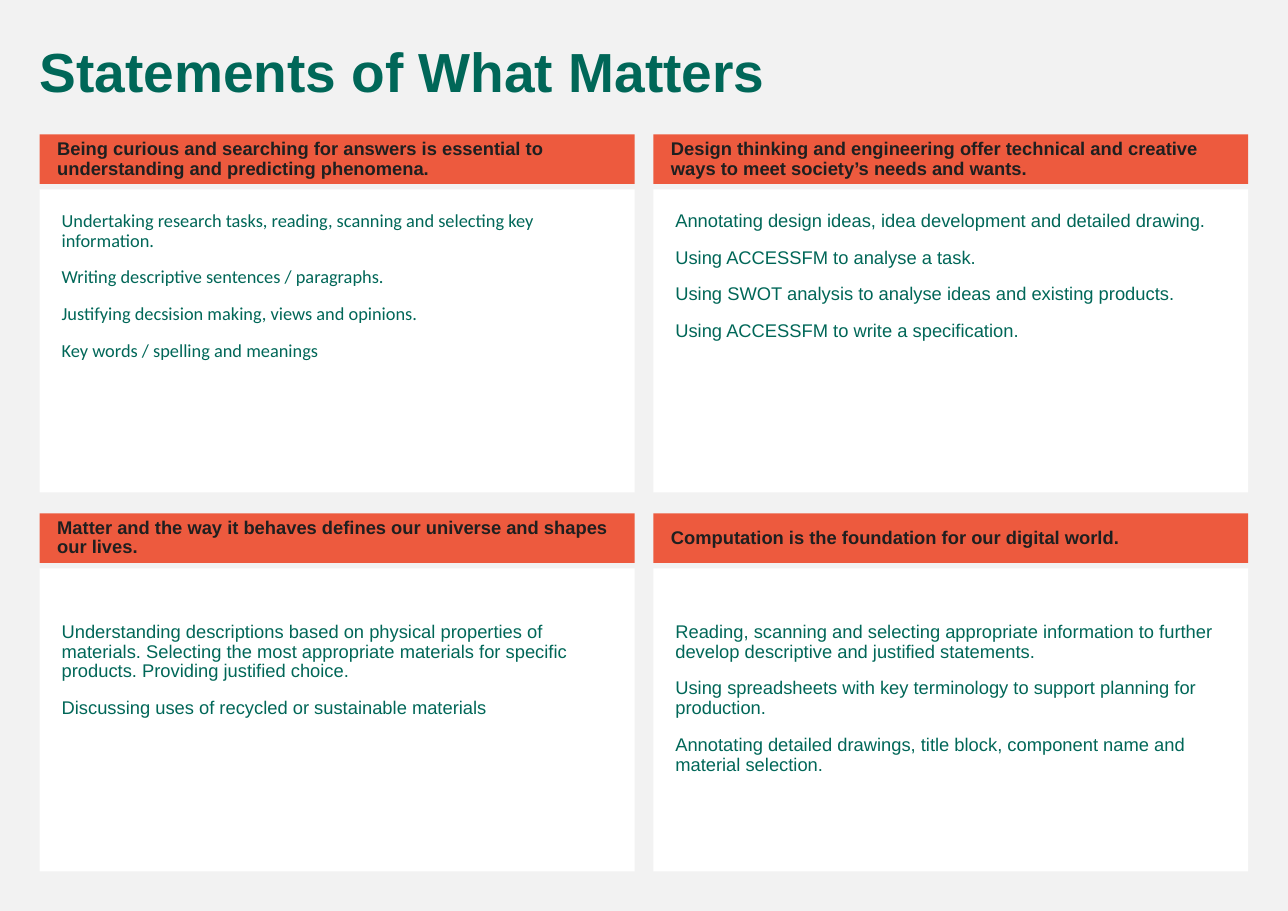
from pptx import Presentation
from pptx.dml.color import RGBColor
from pptx.enum.shapes import MSO_SHAPE
from pptx.enum.text import MSO_ANCHOR, PP_ALIGN
from pptx.util import Inches, Pt

RECTANGLE = MSO_SHAPE.RECTANGLE
TOP, MIDDLE = MSO_ANCHOR.TOP, MSO_ANCHOR.MIDDLE
LEFT = PP_ALIGN.LEFT

BACKGROUND = RGBColor(0xF2, 0xF2, 0xF2)
WHITE = RGBColor(0xFF, 0xFF, 0xFF)
ORANGE = RGBColor(0xED, 0x5A, 0x3E)
GREEN = RGBColor(0x00, 0x67, 0x58)
DARK = RGBColor(0x1F, 0x1F, 0x1F)

GRID_LEFT, GRID_TOP = 0.36, 1.22
COLUMN_STEP, ROW_STEP = 5.57, 3.44
PANEL_WIDTH, HEADER_HEIGHT = 5.4, 0.45
BODY_OFFSET, BODY_HEIGHT = 0.5, 2.75
HEADER_INSETS = (0.16, 0.05, 0.1, 0.05)
BODY_INSET = 0.2
ROW_TOP_INSETS = (0.2, 0.49)

PANELS = [
    ("Being curious and searching for answers is essential to understanding and predicting phenomena.",
     "Calibri",
     ["Undertaking research tasks, reading, scanning and selecting key information.",
      "Writing descriptive sentences / paragraphs.",
      "Justifying decsision making, views and opinions.",
      "Key words / spelling and meanings"]),
    ("Design thinking and engineering offer technical and creative ways to meet society’s needs and wants.",
     "Arial",
     ["Annotating design ideas, idea development and detailed drawing.",
      "Using ACCESSFM to analyse a task.",
      "Using SWOT analysis to analyse ideas and existing products.",
      "Using ACCESSFM to write a specification."]),
    ("Matter and the way it behaves defines our universe and shapes our lives.",
     "Arial",
     ["Understanding descriptions based on physical properties of materials. "
      "Selecting the most appropriate materials for specific products. Providing justified choice.",
      "Discussing uses of recycled or sustainable materials"]),
    ("Computation is the foundation for our digital world.",
     "Arial",
     ["Reading, scanning and selecting appropriate information to further develop "
      "descriptive and justified statements.",
      "Using spreadsheets with key terminology to support planning for production.",
      "Annotating detailed drawings, title block, component name and material selection."]),
]


def write_text(shape, lines, size, color, font="Arial", bold=False, anchor=TOP,
               insets=(0.1, 0.05, 0.1, 0.05)):
    """Fill a shape with one left-aligned paragraph per line."""
    frame = shape.text_frame
    frame.word_wrap = True
    frame.vertical_anchor = anchor
    (frame.margin_left, frame.margin_top,
     frame.margin_right, frame.margin_bottom) = map(Inches, insets)
    for index, line in enumerate(lines):
        paragraph = frame.add_paragraph() if index else frame.paragraphs[0]
        paragraph.alignment = LEFT
        paragraph.line_spacing = 0.9
        paragraph.space_before = Pt(11)
        run = paragraph.add_run()
        run.text = line
        run.font.name = font
        run.font.size = Pt(size)
        run.font.bold = bold
        run.font.color.rgb = color


def add_box(slide, left, top, width, height, fill):
    """Add a plain rectangle without outline or shadow."""
    shape = slide.shapes.add_shape(
        RECTANGLE, Inches(left), Inches(top), Inches(width), Inches(height))
    shape.shadow.inherit = False
    shape.fill.solid()
    shape.fill.fore_color.rgb = fill
    shape.line.fill.background()
    return shape


def add_title(slide, left, top, width, height):
    """Add the slide title."""
    title = slide.shapes.add_textbox(
        Inches(left), Inches(top), Inches(width), Inches(height))
    write_text(title, ["Statements of What Matters"], 36, GREEN, bold=True)


def add_panel(slide, left, top, statement, font, activities, top_inset):
    """Add a statement header with its activities box below."""
    body = add_box(slide, left, top + BODY_OFFSET, PANEL_WIDTH, BODY_HEIGHT, WHITE)
    write_text(body, activities, 12, GREEN, font,
               insets=(BODY_INSET, top_inset, BODY_INSET, BODY_INSET))
    header = add_box(slide, left, top, PANEL_WIDTH, HEADER_HEIGHT, ORANGE)
    write_text(header, [statement], 12, DARK, bold=True, anchor=MIDDLE,
               insets=HEADER_INSETS)


def main():
    """Build and save the slide."""
    presentation = Presentation()
    presentation.slide_width = Inches(11.69)
    presentation.slide_height = Inches(8.27)
    slide = presentation.slides.add_slide(presentation.slide_layouts[6])
    slide.background.fill.solid()
    slide.background.fill.fore_color.rgb = BACKGROUND
    add_title(slide, 0.26, 0.36, 11.08, 0.65)
    for index, (statement, font, activities) in enumerate(PANELS):
        row, column = divmod(index, 2)
        add_panel(slide, GRID_LEFT + column * COLUMN_STEP, GRID_TOP + row * ROW_STEP,
                  statement, font, activities, ROW_TOP_INSETS[row])
    presentation.save("out.pptx")


if __name__ == "__main__":
    main()
